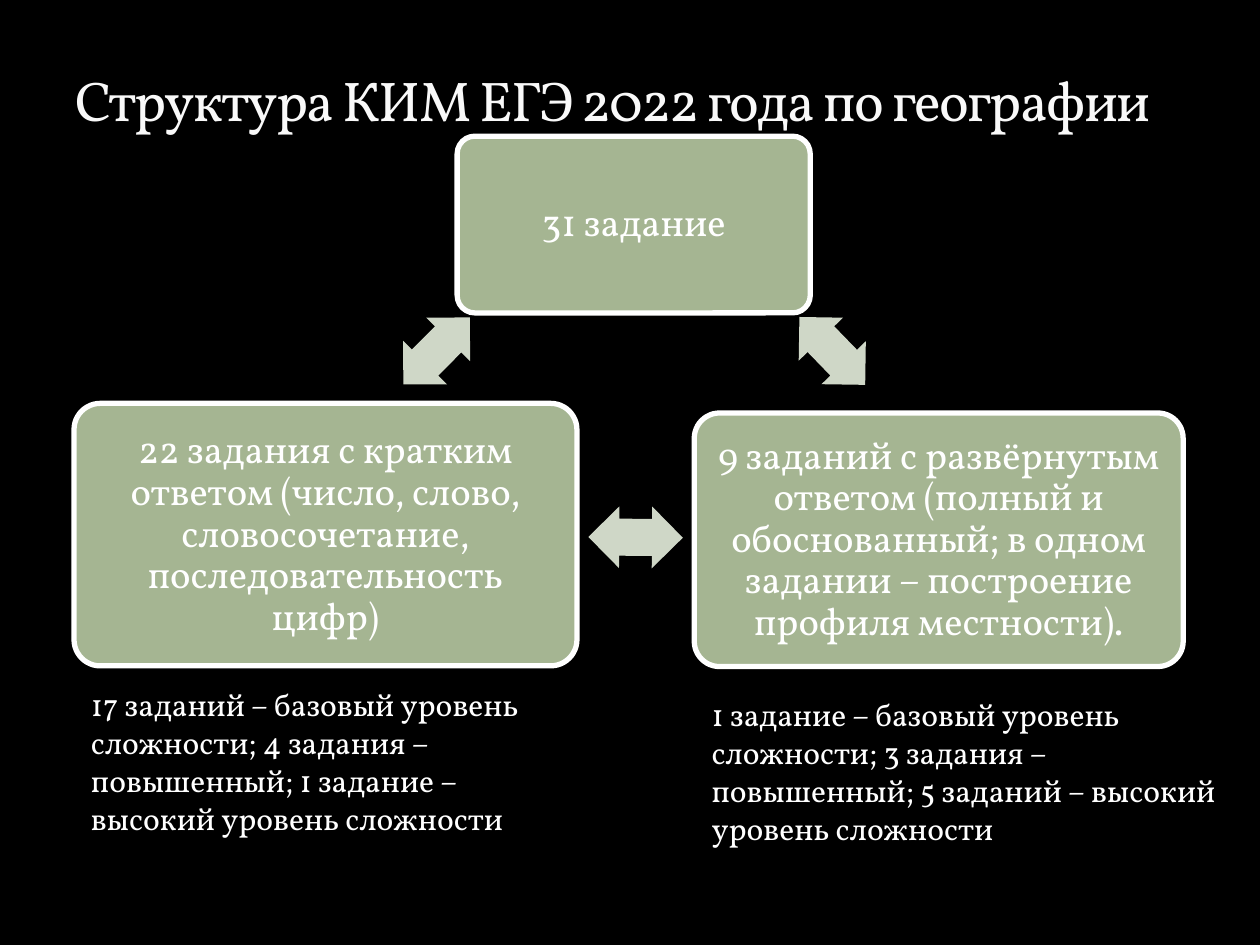
"""Builds the slide on the structure of the 2022 geography exam."""
import pptx
import pptx.util
import pptx.dml.color
import pptx.enum.shapes
import pptx.enum.text

Pt = pptx.util.Pt
RGB = pptx.dml.color.RGBColor.from_string
SHAPE = pptx.enum.shapes.MSO_SHAPE
ALIGN = pptx.enum.text.PP_ALIGN
ANCHOR = pptx.enum.text.MSO_ANCHOR
COLORS = {"back": "000000", "box": "A5B592", "arrow": "CFD7C7",
          "text": "FFFFFF", "title": "F9F9F9"}


def write(sp, text, size=18, color="text", align=ALIGN.LEFT,
          anchor=ANCHOR.TOP, inset=None, line=1.0, tracking=None):
    tf = sp.text_frame
    tf.word_wrap = True
    tf.auto_size = pptx.enum.text.MSO_AUTO_SIZE.NONE
    tf.vertical_anchor = anchor
    if inset is not None:
        tf.margin_left = tf.margin_right = Pt(inset)
        tf.margin_top = tf.margin_bottom = Pt(inset)
    p = tf.paragraphs[0]
    p.alignment = align
    p.line_spacing = line
    r = p.add_run()
    r.text = text
    r.font.size = Pt(size)
    r.font.name = "Vollkorn"
    r.font.color.rgb = RGB(COLORS[color])
    if tracking is not None:
        r._r.get_or_add_rPr().set("spc", str(tracking))


prs = pptx.Presentation()
prs.slide_width, prs.slide_height = Pt(720), Pt(540)
s = prs.slides.add_slide(prs.slide_layouts[5])
s.background.fill.solid()
s.background.fill.fore_color.rgb = RGB(COLORS["back"])

boxes = [
    (261.2, 77.8, 201.8, 101, "31 задание"),
    (396.7, 236, 279.4, 144.9,
     "9 заданий с развёрнутым ответом (полный и обоснованный; "
     "в одном задании – построение профиля местности)."),
    (42.3, 230.5, 287.4, 150,
     "22 задания с кратким ответом (число, слово, словосочетание, "
     "последовательность цифр)"),
]
for left, top, width, height, text in boxes:
    sp = s.shapes.add_shape(SHAPE.ROUNDED_RECTANGLE,
                            Pt(left), Pt(top), Pt(width), Pt(height))
    sp.adjustments[0] = 0.1
    sp.shadow.inherit = False
    sp.fill.solid()
    sp.fill.fore_color.rgb = RGB(COLORS["box"])
    sp.line.color.rgb = RGB(COLORS["text"])
    sp.line.width = Pt(3)
    write(sp, text, size=22, align=ALIGN.CENTER, anchor=ANCHOR.MIDDLE,
          inset=6.5, line=0.9)

arrows = [(448.6, 182.9, 45.9), (336.2, 289.4, 180.5), (222.5, 182.9, 314.8)]
for left, top, angle in arrows:
    sp = s.shapes.add_shape(SHAPE.LEFT_RIGHT_ARROW,
                            Pt(left), Pt(top), Pt(54), Pt(35.3))
    sp.adjustments[0], sp.adjustments[1] = 0.6, 0.5
    sp.rotation = angle
    sp.shadow.inherit = False
    sp.fill.solid()
    sp.fill.fore_color.rgb = RGB(COLORS["arrow"])
    sp.line.fill.background()

title = s.shapes.title
title.left, title.top, title.width, title.height = Pt(36), Pt(12.2), Pt(648), Pt(67)
write(title, "Структура КИМ ЕГЭ 2022 года по географии", size=32,
      color="title", anchor=ANCHOR.BOTTOM, tracking=-100)

notes = [
    (44.9, 388, 281.5,
     "17 заданий – базовый уровень сложности; 4 задания – повышенный; "
     "1 задание – высокий уровень сложности"),
    (399.6, 393.8, 309.6,
     "1 задание – базовый уровень сложности; 3 задания – повышенный; "
     "5 заданий – высокий уровень сложности"),
]
for left, top, width, text in notes:
    write(s.shapes.add_textbox(Pt(left), Pt(top), Pt(width), Pt(94.5)), text)

prs.save("out.pptx")
